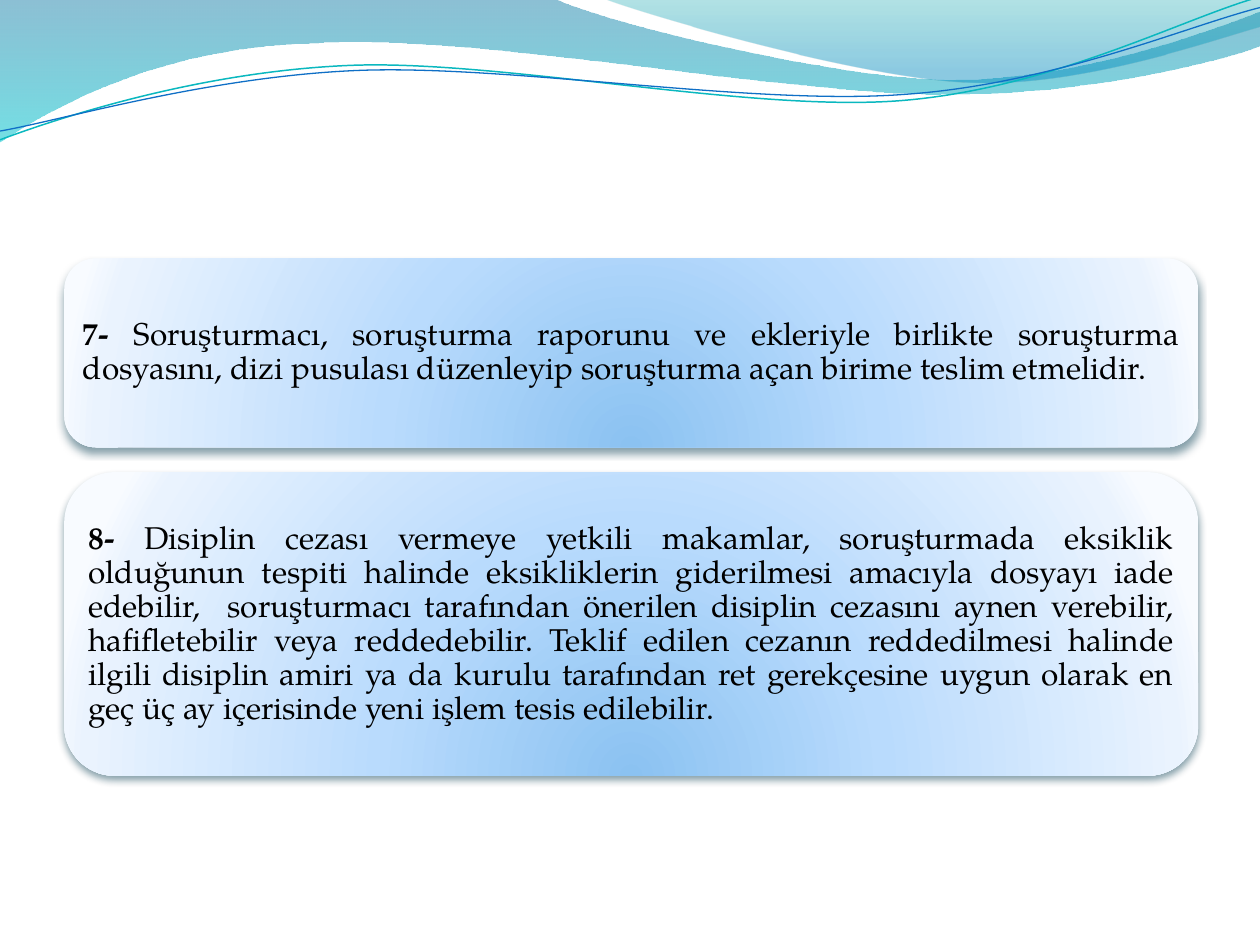
from math import cos, radians, sin

from lxml import etree
from pptx import Presentation
from pptx.dml.color import RGBColor
from pptx.enum.shapes import MSO_SHAPE
from pptx.enum.text import MSO_ANCHOR, PP_ALIGN
from pptx.oxml import parse_xml
from pptx.oxml.ns import nsdecls, qn
from pptx.util import Pt


def draw_curve(shapes, box, start, segments, rotation=0):
    """Draw an outline of lines (x, y) and cubics (x1, y1, x2, y2, x, y), given as it lies after rotation."""
    left, top, width, height = box
    fb = shapes.build_freeform(Pt(left), Pt(top))
    fb.add_line_segments([(Pt(left + width), Pt(top)), (Pt(left + width), Pt(top + height))])
    sp = fb.convert_to_shape()
    sp.shadow.inherit = False
    sp.rotation = rotation
    path = next(sp._element.iter(qn("a:path")))
    for child in list(path):
        path.remove(child)
    c, d = cos(radians(-rotation)), sin(radians(-rotation))
    commands = [("a:moveTo", start)]
    commands += [("a:lnTo" if len(seg) == 2 else "a:cubicBezTo", seg) for seg in segments]
    for tag, coords in commands:
        command = etree.SubElement(path, qn(tag))
        for x, y in zip(coords[::2], coords[1::2]):
            dx, dy = x - left - width / 2, y - top - height / 2
            etree.SubElement(command, qn("a:pt"), x=str(Pt(dx * c - dy * d + width / 2)),
                             y=str(Pt(dx * d + dy * c + height / 2)))
    if segments[-1] == start:
        etree.SubElement(path, qn("a:close"))
    return sp


def fill_gradient(sp, stops, direction):
    """Fill with stops (position %, colour, optional opacity %) along the given direction XML."""
    gs = ""
    for pos, color, *opacity in stops:
        alpha = "".join(f'<a:alpha val="{o * 1000}"/>' for o in opacity)
        gs += f'<a:gs pos="{pos * 1000}"><a:srgbClr val="{color}">{alpha}</a:srgbClr></a:gs>'
    sp.fill.background()
    spPr = sp._element.spPr
    spPr.replace(spPr.find(qn("a:noFill")), parse_xml(
        f'<a:gradFill {nsdecls("a")} rotWithShape="1"><a:gsLst>{gs}</a:gsLst>{direction}</a:gradFill>'))
    sp.line.fill.background()


prs = Presentation()
prs.slide_width, prs.slide_height = Pt(720), Pt(540)
s = prs.slides.add_slide(prs.slide_layouts[6])

# Waves along the top
DOWN = '<a:lin ang="5400000" scaled="0"/>'
waves = [
    ((-0.7, -0.7, 721.4, 82.1), (0, 0),
     [(316.8, -0.7), (342.7, 12.2, 478.1, 45.4, 545.8, 45.4), (614.2, 45.4, 689.8, 18.7, 720, 6.5),
      (720.7, 25.9), (707.8, 31.7, 626.4, 54.7, 537.1, 54), (447.8, 54, 275, 20.2, 185, 24.5),
      (92.9, 25.9, 33.1, 59.8, -0.7, 81.4), (0, 0)],
     [(0, "0074A1", 45), (100, "00C6CF", 55)]),
    ((344.9, -0.7, 375.1, 50.4), (344.9, -0.7),
     [(366.5, 7.9, 491, 44.6, 553.7, 46.8), (616.3, 49.7, 691.9, 23, 720, 15.1), (720, 0),
      (344.9, -0.7)],
     [(0, "00A1A9", 30), (80, "008BBF", 45)]),
]
for box, start, segments, stops in waves:
    fill_gradient(draw_curve(s.shapes, box, start, segments), stops, DOWN)

wave_lines = [
    ((-1.4, 15.8, 721.4, 51.1), (0, 79.9),
     [(34.6, 67, 113.8, 41, 199.4, 37.4), (284.4, 33.8, 427, 64.1, 513.4, 57.6),
      (599.8, 51.1, 675.4, 10.8, 718.6, -1.4)], "0AB8BF", 0.85),
    ((-1.4, 21.6, 722.2, 41.8), (0, 74.9),
     [(33.8, 69.1, 118.1, 43.9, 203.8, 40.3), (290.2, 36.7, 429.8, 60.5, 516.2, 54),
      (601.9, 48.2, 677.5, 15.1, 720, 4.3)], "0F6FC6", 0.75),
]
for box, start, segments, color, width in wave_lines:
    sp = draw_curve(s.shapes, box, start, segments, 357.3)
    sp.fill.background()
    sp.line.color.rgb = RGBColor.from_string(color)
    sp.line.width = Pt(width)

# Numbered cards
GLOW = '<a:path path="circle"><a:fillToRect l="50000" t="130000" r="50000" b="-30000"/></a:path>'
CARD_STOPS = [(0, "8BC2F1"), (43, "B9DBFD"), (93, "EAF3FE"), (100, "F8FBFF")]
LEFT, WIDTH = 36.7, 648
CORNER_INSET = 0.0488  # share of the height that clears the rounded corners
cards = [
    (147.6, 108, "7-",
     " Soruşturmacı, soruşturma raporunu ve ekleriyle birlikte soruşturma dosyasını, dizi pusulası "
     "düzenleyip soruşturma açan birime teslim etmelidir."),
    (269.8, 173.5, "8-",
     " Disiplin cezası vermeye yetkili makamlar, soruşturmada eksiklik olduğunun tespiti halinde "
     "eksikliklerin giderilmesi amacıyla dosyayı iade edebilir,  soruşturmacı tarafından önerilen "
     "disiplin cezasını aynen verebilir, hafifletebilir veya reddedebilir. Teklif edilen cezanın "
     "reddedilmesi halinde ilgili disiplin amiri ya da kurulu tarafından ret gerekçesine uygun olarak "
     "en geç üç ay içerisinde yeni işlem tesis edilebilir."),
]
for top, height, number, text in cards:
    sp = s.shapes.add_shape(MSO_SHAPE.ROUNDED_RECTANGLE, Pt(LEFT), Pt(top), Pt(WIDTH), Pt(height))
    fill_gradient(sp, CARD_STOPS, GLOW)
    sp.shadow.inherit = False
    effects = sp._element.spPr.find(qn("a:effectLst"))
    shadow = etree.SubElement(effects, qn("a:outerShdw"), blurRad=str(Pt(4.5)), dist=str(Pt(3)),
                              dir="5400000", rotWithShape="0")
    tint = etree.SubElement(shadow, qn("a:srgbClr"), val="00374C")
    etree.SubElement(tint, qn("a:alpha"), val="48000")

    inset = height * CORNER_INSET
    tb = s.shapes.add_textbox(Pt(LEFT + inset), Pt(top + inset), Pt(WIDTH - 2 * inset),
                              Pt(height - 2 * inset))
    tf = tb.text_frame
    tf.word_wrap = True
    tf.vertical_anchor = MSO_ANCHOR.MIDDLE
    tf.margin_left = tf.margin_right = tf.margin_top = tf.margin_bottom = Pt(5.4)
    p = tf.paragraphs[0]
    p.alignment = PP_ALIGN.JUSTIFY
    p.line_spacing = 0.9
    p.space_after = Pt(6.3)
    p.font.name = "TeX Gyre Pagella"
    p.font.size = Pt(18)
    p.font.color.rgb = RGBColor.from_string("000000")
    r = p.add_run()
    r.text = number
    r.font.bold = True
    p.add_run().text = text

prs.save("out.pptx")
